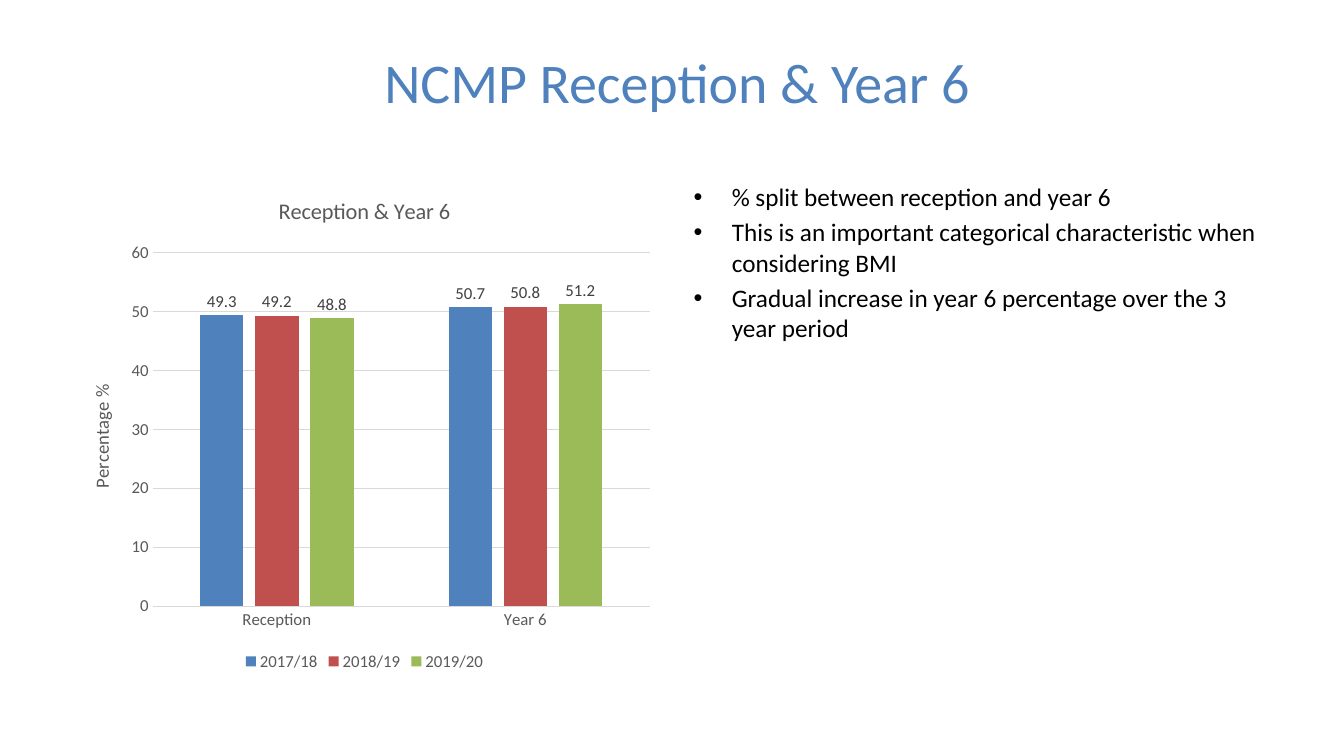
from lxml import etree
from pptx import Presentation
from pptx import util as u
from pptx.chart.data import CategoryChartData
from pptx.dml.color import RGBColor
from pptx.enum import chart as ch, text
from pptx.oxml.ns import qn

PX = 9144
FONT = "Calibri"
COLORS = {
    "blue": "4F81BD", "red": "C0504D", "green": "9BBB59",
    "black": "000000", "grey": "595959", "label": "404040", "grid": "D9D9D9",
}
CATEGORIES = ["Reception", "Year 6"]
SERIES = [
    ("2017/18", (49.3, 50.7), "blue"),
    ("2018/19", (49.2, 50.8), "red"),
    ("2019/20", (48.8, 51.2), "green"),
]
BULLETS = [
    "% split between reception and year 6",
    "This is an important categorical characteristic when considering BMI",
    "Gradual increase in year 6 percentage over the 3 year period",
]


def px(*lengths):
    return [u.Emu(n * PX) for n in lengths]


def rgb(name):
    return RGBColor.from_string(COLORS[name])


def style(font, size, color):
    font.name = FONT
    font.size = u.Pt(size)
    font.bold = False
    font.color.rgb = rgb(color)


def add_run(p, words, size, color):
    r = p.add_run()
    r.text = words
    style(r.font, size, color)


def thin_line(line):
    line.color.rgb = rgb("grid")
    line.width = u.Pt(0.75)


def set_title(s, words, box):
    sp = s.shapes.title
    sp.left, sp.top, sp.width, sp.height = px(*box)
    tf = sp.text_frame
    tf.vertical_anchor = text.MSO_ANCHOR.MIDDLE
    p = tf.paragraphs[0]
    p.alignment = text.PP_ALIGN.CENTER
    add_run(p, words, 40, "blue")


def add_bullets(s, items, box):
    tf = s.shapes.add_textbox(*px(*box)).text_frame
    tf.word_wrap = True
    for i, item in enumerate(items):
        p = tf.add_paragraph() if i else tf.paragraphs[0]
        pPr = p._p.get_or_add_pPr()
        indent = px(38)[0]
        pPr.set("marL", str(indent))
        pPr.set("indent", str(-indent))
        etree.SubElement(pPr, qn("a:buFont")).set("typeface", "Arial")
        etree.SubElement(pPr, qn("a:buChar")).set("char", "•")
        if i:
            p.space_before = u.Pt(3.6)
        add_run(p, item, 18, "black")


def style_axes(chart):
    cat, val = chart.category_axis, chart.value_axis
    for axis in (cat, val):
        axis.major_tick_mark = axis.minor_tick_mark = ch.XL_TICK_MARK.NONE
        style(axis.tick_labels.font, 12, "grey")
    thin_line(cat.format.line)
    thin_line(val.major_gridlines.format.line)
    val.format.line.fill.background()
    val.minimum_scale, val.maximum_scale, val.major_unit = 0, 60, 10
    add_run(val.axis_title.text_frame.paragraphs[0], "Percentage %", 13.3, "grey")


def add_column_chart(s, title, box):
    data = CategoryChartData(number_format="0.0")
    data.categories = CATEGORIES
    for name, values, _ in SERIES:
        data.add_series(name, values)
    chart = s.shapes.add_chart(
        ch.XL_CHART_TYPE.COLUMN_CLUSTERED, *px(*box), data).chart
    style(chart.font, 10, "black")
    chart.has_title = True
    add_run(chart.chart_title.text_frame.paragraphs[0], title, 16, "grey")
    chart.chart_title.include_in_layout = False
    chart.has_legend = True
    chart.legend.position = ch.XL_LEGEND_POSITION.BOTTOM
    chart.legend.include_in_layout = False
    style(chart.legend.font, 12, "grey")
    style_axes(chart)
    chart.value_axis.tick_labels.number_format = "0"
    chart.value_axis.tick_labels.number_format_is_linked = False
    plot = chart.plots[0]
    plot.vary_by_categories = False
    plot.gap_width, plot.overlap = 219, -27
    for series, (_, _, color) in zip(plot.series, SERIES):
        series.format.fill.solid()
        series.format.fill.fore_color.rgb = rgb(color)
        labels = series.data_labels
        labels.show_value = True
        labels.position = ch.XL_LABEL_POSITION.OUTSIDE_END
        style(labels.font, 12, "label")


def main():
    prs = Presentation()
    prs.slide_width, prs.slide_height = px(1333, 750)
    s = prs.slides.add_slide(prs.slide_layouts[5])
    set_title(s, "NCMP Reception & Year 6", (31, 18, 1281, 125))
    add_column_chart(s, "Reception & Year 6", (67, 175, 589, 495))
    add_bullets(s, BULLETS, (678, 175, 589, 495))
    prs.save("out.pptx")


if __name__ == "__main__":
    main()
